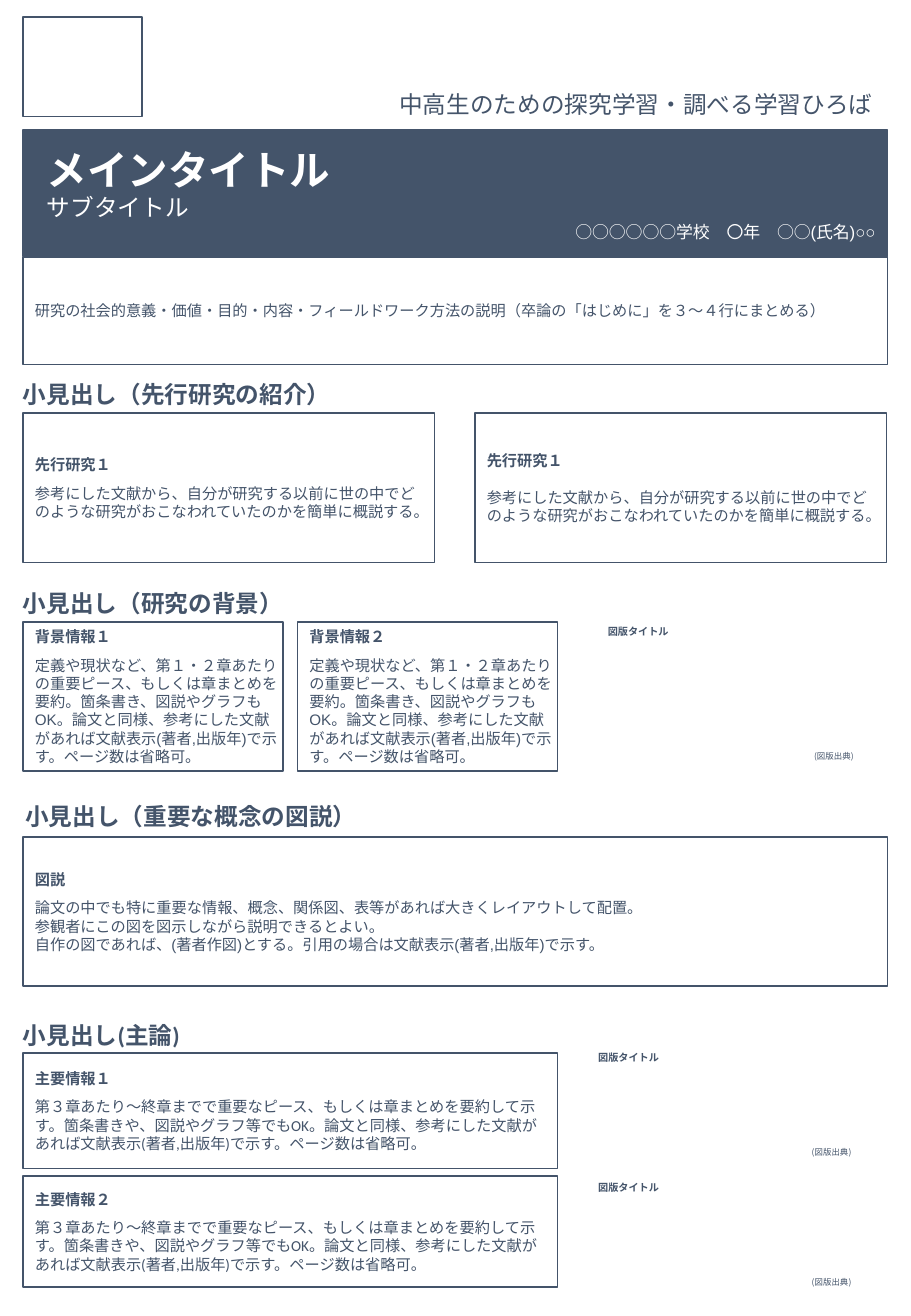
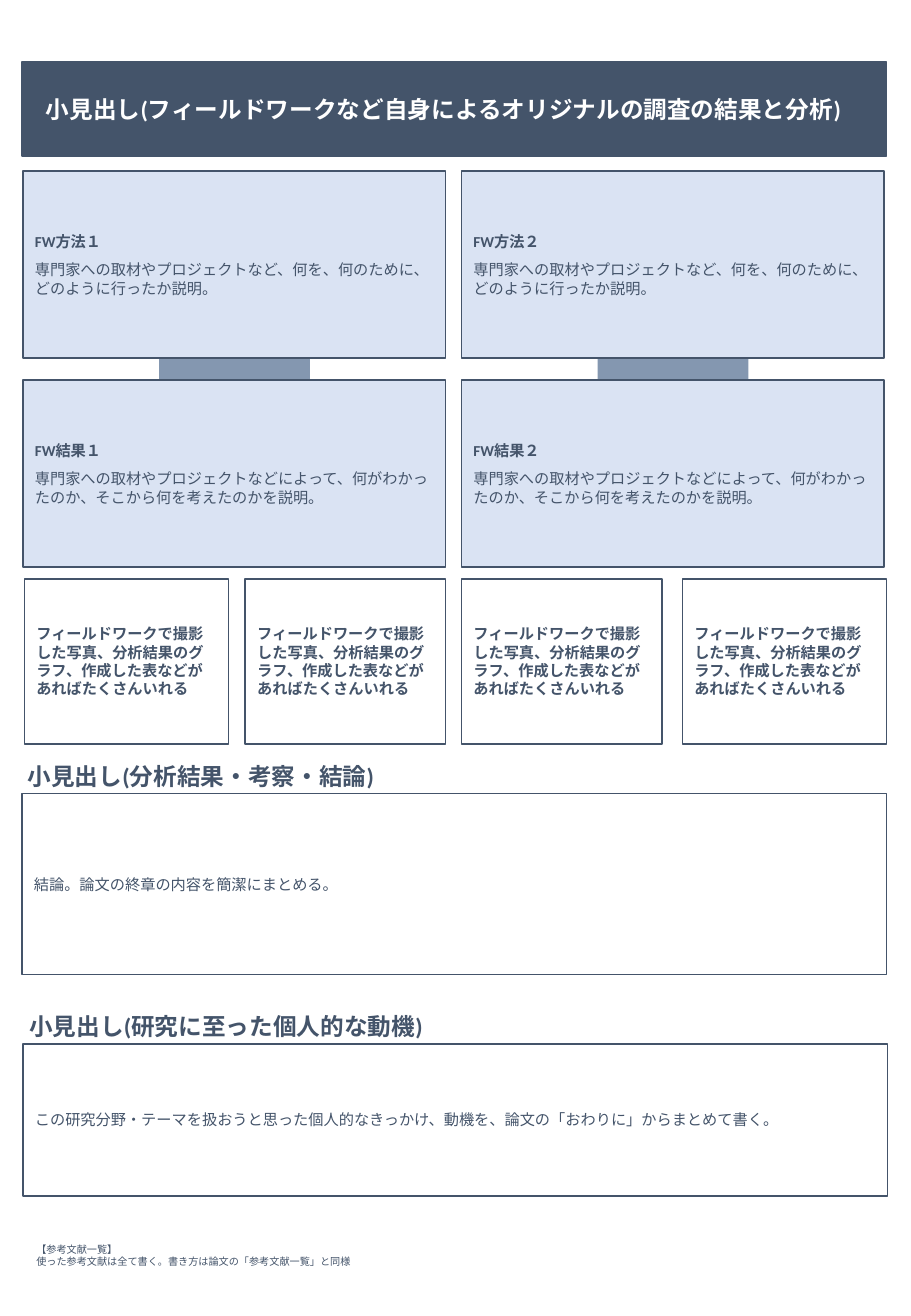
from lxml.etree import SubElement as Sub
from pptx import Presentation
from pptx.dml.color import RGBColor
from pptx.enum.lang import MSO_LANGUAGE_ID as Lang
from pptx.enum.shapes import MSO_SHAPE as Shape
from pptx.enum.text import MSO_ANCHOR as Anchor, PP_ALIGN as Align
from pptx.oxml.ns import qn
from pptx.util import Cm, Pt

NAVY, WHITE, PALE, STEEL = "44546A", "FFFFFF", "DAE3F3", "8497B0"
NOTO = "Noto Sans CJK JP"
LEFT, FULL = 0.48, 18.08
PRIOR = "参考にした文献から、自分が研究する以前に世の中でどのような研究がおこなわれていたのかを簡単に概説する。"
BACK = "定義や現状など、第１・２章あたりの重要ピース、もしくは章まとめを要約。箇条書き、図説やグラフもOK。論文と同様、参考にした文献があれば文献表示(著者,出版年)で示す。ページ数は省略可。"
MAIN = "第３章あたり～終章までで重要なピース、もしくは章まとめを要約して示す。箇条書きや、図説やグラフ等でもOK。論文と同様、参考にした文献があれば文献表示(著者,出版年)で示す。ページ数は省略可。"
CHART = [
    "論文の中でも特に重要な情報、概念、関係図、表等があれば大きくレイアウトして配置。",
    "参観者にこの図を図示しながら説明できるとよい。",
    "自作の図であれば、(著者作図)とする。引用の場合は文献表示(著者,出版年)で示す。",
]
METHOD = "専門家への取材やプロジェクトなど、何を、何のために、どのように行ったか説明。"
RESULT = "専門家への取材やプロジェクトなどによって、何がわかったのか、そこから何を考えたのかを説明。"
PHOTO = "フィールドワークで撮影した写真、分析結果のグラフ、作成した表などがあればたくさんいれる"


def paint(code):
    return RGBColor.from_string(code)


def write(frame, text, size=9, bold=False, color=NAVY, font="Calibri",
          east="Calibri", align=Align.LEFT, gap=0, indent=0):
    first = frame.paragraphs[0]
    para = frame.add_paragraph() if first.runs else first
    para.alignment = align
    if gap:
        para.space_before = Pt(gap)
    if indent:
        para._p.get_or_add_pPr().set("marL", str(Cm(indent)))
    run = para.add_run()
    run.text = text
    face = run.font
    face.size, face.bold = Pt(size), bold
    face.color.rgb = paint(color)
    face.language_id = Lang.JAPANESE
    face.name = font
    Sub(run._r.rPr, qn("a:ea"), typeface=east)


class Poster:
    def __init__(self):
        self.deck = Presentation()
        self.deck.slide_width, self.deck.slide_height = Cm(19.05), Cm(27.51)

    def page(self):
        self.slide = self.deck.slides.add_slide(self.deck.slide_layouts[6])

    def box(self, x, y, wide, high, fill=WHITE, line=NAVY):
        item = self.slide.shapes.add_shape(
            Shape.RECTANGLE, Cm(x), Cm(y), Cm(wide), Cm(high))
        item.shadow.inherit = False
        if fill:
            item.fill.solid()
            item.fill.fore_color.rgb = paint(fill)
        else:
            item.fill.background()
        if line:
            item.line.color.rgb = paint(line)
            item.line.width = Pt(1)
        else:
            item.line.fill.background()
        frame = item.text_frame
        frame.word_wrap, frame.vertical_anchor = True, Anchor.MIDDLE
        return frame

    def panel(self, x, y, wide, high, head, *body, fill=WHITE, font="Calibri",
              gap=6, pad=0.25):
        frame = self.box(x, y, wide, high, fill)
        frame.margin_right = Cm(pad)
        write(frame, head, bold=True, font=font)
        for num, line in enumerate(body):
            write(frame, line, font=font, gap=0 if num else gap)

    def note(self, x, y, wide, high, *lines, anchor=Anchor.MIDDLE, **form):
        frame = self.slide.shapes.add_textbox(
            Cm(x), Cm(y), Cm(wide), Cm(high)).text_frame
        frame.word_wrap, frame.vertical_anchor = True, anchor
        for line in lines:
            write(frame, line, **form)

    def head(self, x, y, text):
        self.note(x, y, 18.34, 0.74, text, size=14, bold=True)

    def figure(self, x, y, end, low):
        form = dict(font=NOTO, east=NOTO, align=Align.CENTER)
        self.note(x, y, 2.11, 0.74, "図版タイトル", size=6, bold=True, **form)
        self.note(end, low, 1.96, 0.74, "(図版出典)", size=5, **form)


def front(art):
    art.page()
    art.box(LEFT, 0.36, 2.49, 2.08)
    art.note(8.03, 1.75, 10.54, 0.86, "中高生のための探究学習・調べる学習ひろば",
             anchor=Anchor.TOP, size=14, align=Align.CENTER)
    band = art.box(LEFT, 2.72, FULL, 2.64, NAVY)
    style = dict(color=WHITE, font="Arial")
    write(band, "メインタイトル", size=24, bold=True, indent=0.25, **style)
    write(band, "サブタイトル", size=14, indent=0.25, **style)
    write(band, "○○○○○○学校　〇年　○○(氏名)○○", size=10, east=NOTO,
          align=Align.RIGHT, **style)
    write(art.box(LEFT, 5.38, FULL, 2.24),
          "研究の社会的意義・価値・目的・内容・フィールドワーク方法の説明（卒論の「はじめに」を３～４行にまとめる）")

    art.head(0.23, 7.87, "小見出し（先行研究の紹介）")
    for x, gap in ((LEFT, 6), (9.93, 11)):
        art.panel(x, 8.64, 8.61, 3.12, "先行研究１", PRIOR, font="Arial", gap=gap)

    art.head(0.23, 12.24, "小見出し（研究の背景）")
    for x, mark in ((LEFT, "１"), (6.22, "２")):
        art.panel(x, 13, 5.44, 3.12, "背景情報" + mark, BACK, font="Arial", pad=0.05)
    art.figure(12.29, 12.83, 16.46, 15.44)

    art.head(0.28, 16.69, "小見出し（重要な概念の図説）")
    art.panel(LEFT, 17.5, FULL, 3.12, "図説", *CHART, font="Arial")

    art.head(0.23, 21.26, "小見出し(主論)")
    for mark, y, high, top, low in (("１", 22.02, 2.41, 21.74, 23.72),
                                    ("２", 24.59, 2.31, 24.46, 26.44)):
        art.panel(LEFT, y, 11.18, high, "主要情報" + mark, MAIN)
        art.figure(12.09, top, 16.41, low)


def back(art):
    art.page()
    write(art.box(0.46, 1.3, FULL, 1.96, NAVY),
          "小見出し(フィールドワークなど自身によるオリジナルの調査の結果と分析)",
          size=14, bold=True, color=WHITE, indent=0.25)
    for x, mark in ((LEFT, "１"), (9.65, "２")):
        art.box(x + 2.85, 6.3, 3.15, 3.91, STEEL, None)
        art.panel(x, 3.58, 8.84, 3.91, "FW方法" + mark, METHOD, fill=PALE)
        art.panel(x, 7.95, 8.84, 3.91, "FW結果" + mark, RESULT, fill=PALE)
    for x, wide in ((0.51, 4.27), (5.13, 4.19), (9.65, 4.19), (14.27, 4.27)):
        write(art.box(x, 12.1, wide, 3.45, None), PHOTO, bold=True)

    art.head(0.33, 15.85, "小見出し(分析結果・考察・結論)")
    write(art.box(0.46, 16.59, FULL, 3.78), "結論。論文の終章の内容を簡潔にまとめる。")
    art.head(0.36, 21.08, "小見出し(研究に至った個人的な動機)")
    write(art.box(LEFT, 21.82, FULL, 3.18),
          "この研究分野・テーマを扱おうと思った個人的なきっかけ、動機を、論文の「おわりに」からまとめて書く。")
    art.note(0.51, 25.3, 18.06, 1.88, "【参考文献一覧】",
             "使った参考文献は全て書く。書き方は論文の「参考文献一覧」と同様", size=6)


def main():
    art = Poster()
    front(art)
    back(art)
    art.deck.save("out.pptx")


if __name__ == "__main__":
    main()
